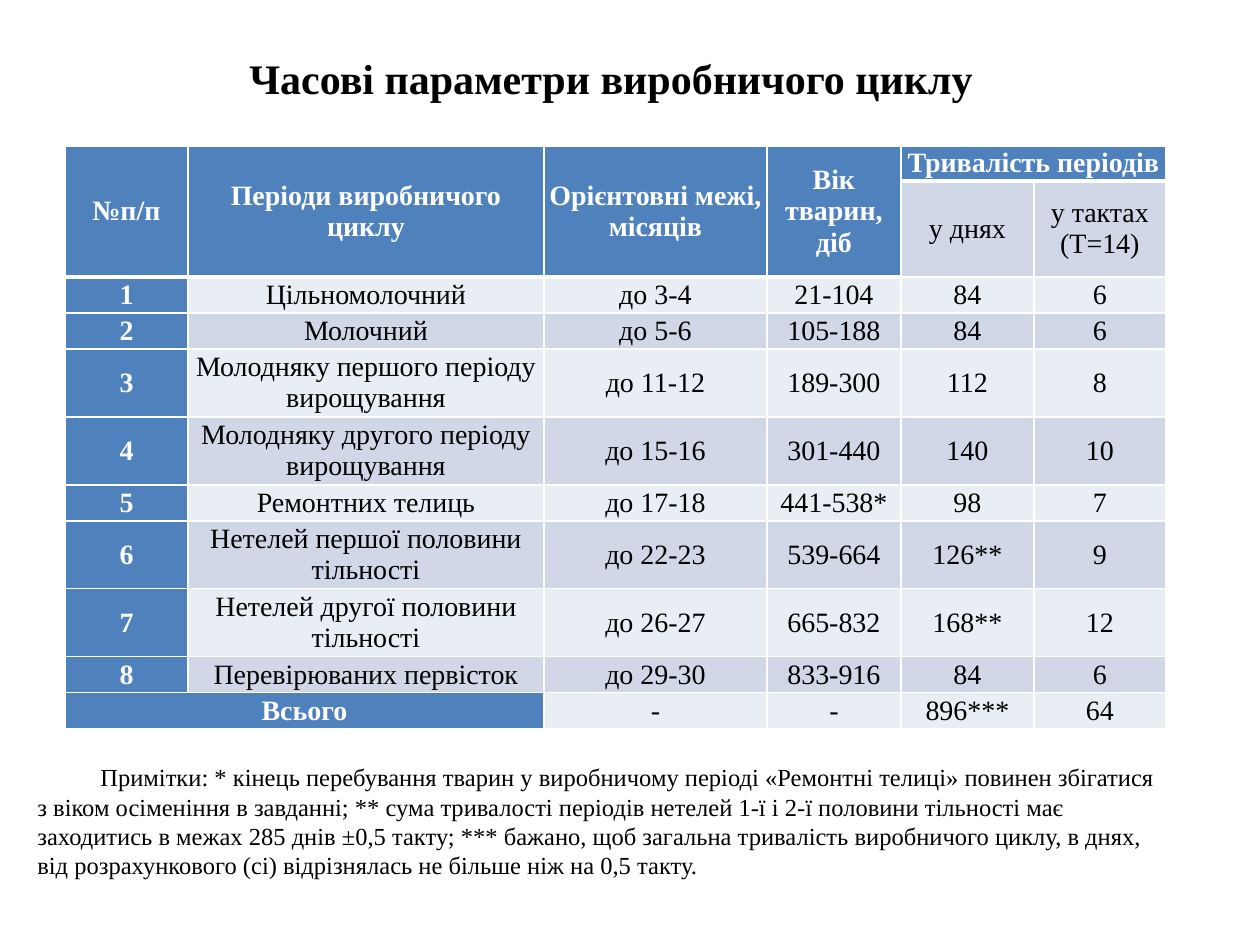
import pptx
import pptx.dml.color
import pptx.enum.text
import pptx.oxml
import pptx.oxml.ns
import pptx.util

EMU_PER_PX = 914400 // 126
FONT = "Times New Roman"
COLORS = {
    "white": "FFFFFF",
    "black": "000000",
    "header": "4F81BD",
    "dark_band": "D0D8E8",
    "light_band": "E9EDF4",
}

COLUMN_WIDTHS = [123, 356, 223, 134, 133, 132]
ONE_LINE, TWO_LINES = 36, 68
ROW_HEIGHTS = [35, 96, ONE_LINE, ONE_LINE, TWO_LINES, TWO_LINES, ONE_LINE,
               TWO_LINES, TWO_LINES, ONE_LINE, ONE_LINE]
HEADER_ROWS = 2
SPLIT_COLUMN = 4  # first of the two duration columns

HEADINGS = [
    ["№п/п", "Періоди виробничого циклу", "Орієнтовні межі, місяців",
     "Вік тварин, діб", "Тривалість періодів", ""],
    ["", "", "", "", "у днях", "у тактах (Т=14)"],
]
PERIODS = [
    ["Цільномолочний", "до 3-4", "21-104", "84", "6"],
    ["Молочний", "до 5-6", "105-188", "84", "6"],
    ["Молодняку першого періоду вирощування", "до 11-12", "189-300", "112", "8"],
    ["Молодняку другого періоду вирощування", "до 15-16", "301-440", "140", "10"],
    ["Ремонтних телиць", "до 17-18", "441-538*", "98", "7"],
    ["Нетелей першої половини тільності", "до 22-23", "539-664", "126**", "9"],
    ["Нетелей другої половини тільності", "до 26-27", "665-832", "168**", "12"],
    ["Перевірюваних первісток", "до 29-30", "833-916", "84", "6"],
]
TOTAL = ["Всього", "", "-", "-", "896***", "64"]
NOTES = (
    "Примітки: * кінець перебування тварин у виробничому періоді «Ремонтні "
    "телиці» повинен збігатися з віком осіменіння в завданні; ** сума тривалості "
    "періодів нетелей 1-ї і 2-ї половини тільності має заходитись в межах 285 днів "
    "±0,5 такту; *** бажано, щоб загальна тривалість виробничого циклу, в днях, "
    "від розрахункового (сі) відрізнялась не більше ніж на 0,5 такту."
)


def px(length):
    return pptx.util.Emu(length * EMU_PER_PX)


def rgb(name):
    return pptx.dml.color.RGBColor.from_string(COLORS[name])


def write_text(frame, text, size=16, color="black", bold=False, centered=False, indent=0):
    para = frame.paragraphs[0]
    if centered:
        para.alignment = pptx.enum.text.PP_ALIGN.CENTER
    if indent:
        para._p.get_or_add_pPr().set("indent", str(px(indent)))
    span = para.add_run()
    span.text = text
    span.font.name = FONT
    span.font.size = pptx.util.Pt(size)
    span.font.bold = bold
    span.font.color.rgb = rgb(color)


def add_text_box(page, left, top, width, height, text, **text_format):
    box = page.shapes.add_textbox(px(left), px(top), px(width), px(height))
    box.text_frame.word_wrap = True
    write_text(box.text_frame, text, **text_format)


def set_borders(cell, top, bottom):
    properties = cell._tc.get_or_add_tcPr()
    for side, points in (("L", 1), ("R", 1), ("T", top), ("B", bottom)):
        properties.append(pptx.oxml.parse_xml(
            f'<a:ln{side} {pptx.oxml.ns.nsdecls("a")} w="{pptx.util.Pt(points)}">'
            f'<a:solidFill><a:srgbClr val="{COLORS["white"]}"/></a:solidFill>'
            f'</a:ln{side}>'))


def format_cell(cell, row, column, text):
    # Thick rules lie under the tall headings and under the duration heading
    heading_end = 1 if column >= SPLIT_COLUMN else HEADER_ROWS
    set_borders(cell, top=3 if row == heading_end else 1,
                bottom=3 if row < heading_end else 1)

    is_total_label = row == len(ROW_HEIGHTS) - 1 and column < 2
    is_heading = row < heading_end or column == 0 or is_total_label
    band = "light_band" if row % 2 == 0 else "dark_band"
    cell.fill.solid()
    cell.fill.fore_color.rgb = rgb("header" if is_heading else band)
    cell.vertical_anchor = pptx.enum.text.MSO_ANCHOR.MIDDLE
    cell.margin_left = cell.margin_right = px(1)
    cell.margin_top = cell.margin_bottom = px(1)
    if text:
        write_text(cell.text_frame, text, bold=is_heading, centered=True,
                   color="white" if is_heading else "black")


def add_period_table(page, left, top):
    numbered = [[str(number), *period] for number, period in enumerate(PERIODS, 1)]
    rows = HEADINGS + numbered + [TOTAL]
    table = page.shapes.add_table(
        len(rows), len(COLUMN_WIDTHS), px(left), px(top),
        px(sum(COLUMN_WIDTHS)), px(sum(ROW_HEIGHTS))).table
    table.first_row = table.horz_banding = False
    for column, width in zip(table.columns, COLUMN_WIDTHS):
        column.width = px(width)
    for row, height in zip(table.rows, ROW_HEIGHTS):
        row.height = px(height)

    # Merged headings and the total label
    for column in range(SPLIT_COLUMN):
        table.cell(0, column).merge(table.cell(1, column))
    table.cell(0, SPLIT_COLUMN).merge(table.cell(0, SPLIT_COLUMN + 1))
    last = len(rows) - 1
    table.cell(last, 0).merge(table.cell(last, 1))

    for row, texts in enumerate(rows):
        for column, text in enumerate(texts):
            format_cell(table.cell(row, column), row, column, text)


def main():
    deck = pptx.Presentation()
    deck.slide_width, deck.slide_height = px(1260), px(945)
    page = deck.slides.add_slide(deck.slide_layouts[6])

    # Table of periods
    add_period_table(page, 65, 146)
    # Notes
    add_text_box(page, 25, 756, 1150, 161, NOTES, size=14, indent=63)
    # Title
    add_text_box(page, 174, 46, 903, 63, "Часові параметри виробничого циклу",
                 size=24, bold=True, indent=63)

    deck.save("out.pptx")


if __name__ == "__main__":
    main()
